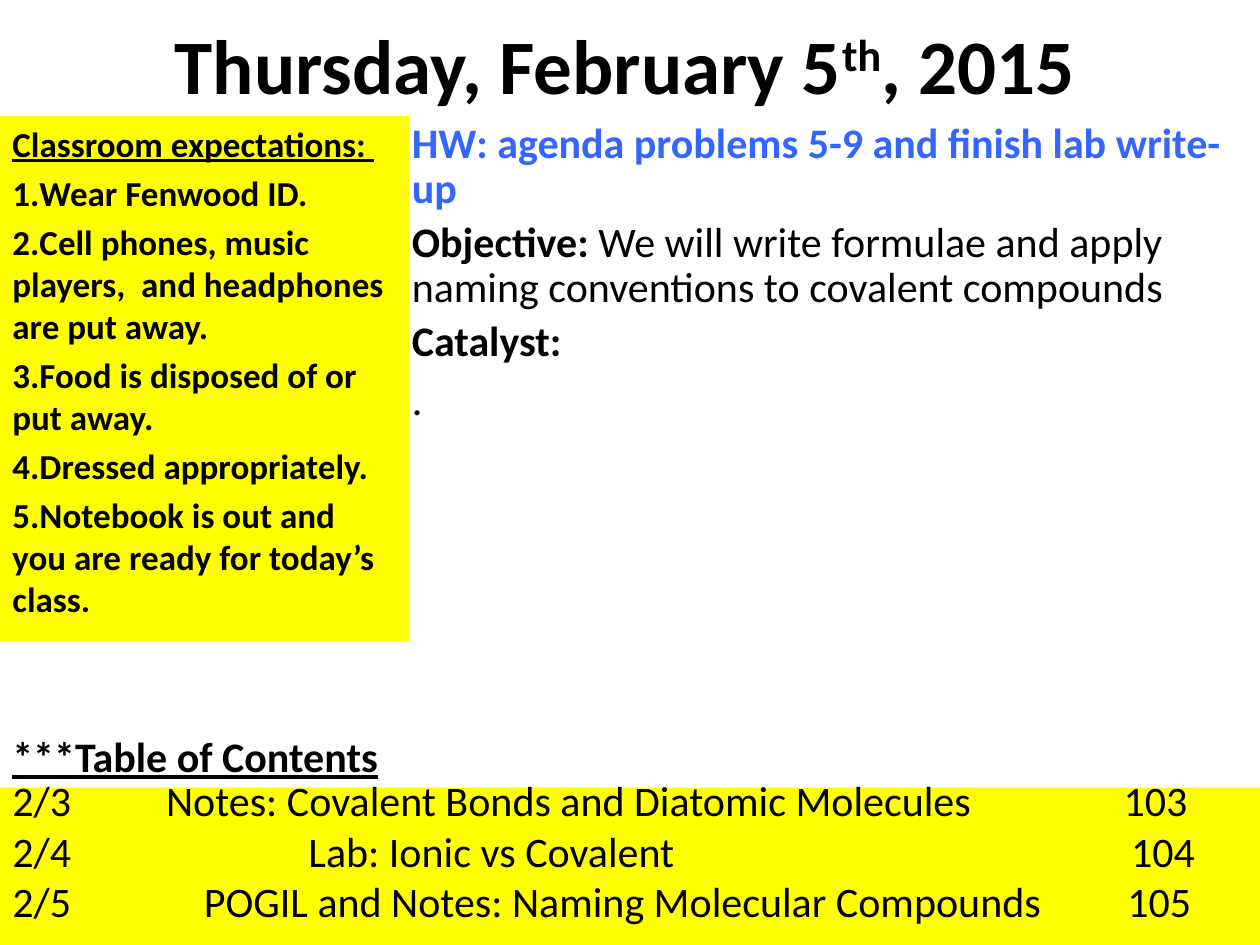
"""Build a class agenda slide with expectations and a table of contents."""
from dataclasses import dataclass

from lxml import etree
from pptx import Presentation
from pptx.dml.color import RGBColor
from pptx.enum.shapes import MSO_SHAPE
from pptx.enum.text import MSO_ANCHOR, PP_ALIGN
from pptx.oxml.ns import qn
from pptx.util import Inches, Pt

RECT = MSO_SHAPE.RECTANGLE
TOP, MIDDLE, BOTTOM = MSO_ANCHOR.TOP, MSO_ANCHOR.MIDDLE, MSO_ANCHOR.BOTTOM
LEFT, CENTER = PP_ALIGN.LEFT, PP_ALIGN.CENTER


@dataclass(frozen=True)
class Theme:
    font: str = "Calibri"
    ink: RGBColor = RGBColor(0, 0, 0)
    blue: RGBColor = RGBColor(0x33, 0x66, 0xFF)
    yellow: RGBColor = RGBColor(0xFF, 0xFF, 0)
    title: int = 44
    body: int = 24
    rule: int = 20


@dataclass(frozen=True)
class Box:
    left: float
    top: float
    width: float
    height: float


@dataclass(frozen=True)
class Entry:
    date: str
    topic: str
    page: int
    start: float
    end: float


THEME = Theme()
RULES = (
    "Wear Fenwood ID.",
    "Cell phones, music players,  and headphones are put away.",
    "Food is disposed of or put away.",
    "Dressed appropriately.",
    "Notebook is out and you are ready for today’s class.",
)
ENTRIES = (
    Entry("2/3", "Notes: Covalent Bonds and Diatomic Molecules", 103, 1.22, 8.82),
    Entry("2/4", "Lab: Ionic vs Covalent", 104, 2.35, 8.88),
    Entry("2/5", "POGIL and Notes: Naming Molecular Compounds", 105, 1.52, 8.85),
)


def frame(slide, box: Box, fill=None, anchor=TOP, wrap=True):
    """Add a text box, or a filled rectangle, and return its text frame."""
    place = [Inches(n) for n in (box.left, box.top, box.width, box.height)]
    if fill is None:
        shape = slide.shapes.add_textbox(*place)
    else:
        shape = slide.shapes.add_shape(RECT, *place)
        shape.shadow.inherit = False
        shape.fill.solid()
        shape.fill.fore_color.rgb = fill
        shape.line.fill.background()
    text = shape.text_frame
    text.word_wrap = wrap
    text.vertical_anchor = anchor
    return text


def line(text, first=False, align=LEFT, before=0.0, space=1.0):
    """Return the first or a new paragraph with its spacing set."""
    para = text.paragraphs[0] if first else text.add_paragraph()
    para.alignment = align
    para.space_before = Pt(before)
    para.line_spacing = space
    return para


def write(para, words: str, size=THEME.body, color=THEME.ink,
          bold=False, under=False, lift=0) -> None:
    """Add one formatted run to a paragraph."""
    run = para.add_run()
    run.text = words
    font = run.font
    font.name, font.size, font.bold, font.underline = THEME.font, Pt(size), bold, under
    font.color.rgb = color
    if lift:
        run._r.get_or_add_rPr().set("baseline", str(lift * 1000))


def number(para) -> None:
    """Number a paragraph with no hanging indent."""
    props = para._p.get_or_add_pPr()
    props.set("marL", "0")
    props.set("indent", "0")
    etree.SubElement(props, qn("a:buFont"), typeface=THEME.font)
    etree.SubElement(props, qn("a:buAutoNum"), type="arabicPeriod")


def tabs(para, *stops: float) -> None:
    """Set left tab stops at the given inches."""
    group = etree.SubElement(para._p.get_or_add_pPr(), qn("a:tabLst"))
    for stop in stops:
        etree.SubElement(group, qn("a:tab"), pos=str(int(Inches(stop))), algn="l")


def heading(slide) -> None:
    """Draw the date."""
    para = line(frame(slide, Box(0.5, 0, 8.92, 0.92), anchor=BOTTOM), True, CENTER)
    for words, lift in (("Thursday, February 5", 0), ("th", 30), (", 2015", 0)):
        write(para, words, size=THEME.title, bold=True, lift=lift)


def agenda(slide) -> None:
    """Draw the homework, objective and catalyst."""
    text = frame(slide, Box(3.17, 0.92, 6.83, 5.25))
    gap = THEME.body * 0.2
    write(line(text, True, before=gap, space=0.9),
          "HW: agenda problems 5-9 and finish lab write-up", color=THEME.blue, bold=True)
    goal = line(text, before=gap, space=0.9)
    write(goal, "Objective: ", bold=True)
    write(goal, "We will write formulae and apply naming conventions to covalent compounds")
    write(line(text, before=gap, space=0.9), "Catalyst:", bold=True)
    write(line(text, before=gap), ".")


def rules(slide) -> None:
    """Draw the numbered classroom expectations."""
    text = frame(slide, Box(0, 0.92, 3.25, 4.17), fill=THEME.yellow)
    gap = THEME.rule * 0.2
    write(line(text, True, before=gap), "Classroom expectations: ",
          size=THEME.rule, bold=True, under=True)
    for rule in RULES:
        para = line(text, before=gap)
        number(para)
        write(para, rule, size=THEME.rule, bold=True)


def contents(slide) -> None:
    """Draw the table of contents and its heading."""
    text = frame(slide, Box(0, 6.25, 10, 1.25), fill=THEME.yellow, anchor=MIDDLE)
    text.margin_top, text.margin_bottom = Inches(0), Inches(0.25)
    for spot, entry in enumerate(ENTRIES):
        para = line(text, spot == 0)
        tabs(para, entry.start, entry.end)
        write(para, f"{entry.date}\t{entry.topic}\t{entry.page}")
    label = frame(slide, Box(0, 5.75, 3.17, 0.51), wrap=False)
    write(line(label, True), "***Table of Contents", bold=True, under=True)


def main() -> None:
    """Build and save the slide."""
    deck = Presentation()
    deck.slide_width, deck.slide_height = Inches(10), Inches(7.5)
    slide = deck.slides.add_slide(deck.slide_layouts[6])
    for draw in (heading, agenda, rules, contents):
        draw(slide)
    deck.save("out.pptx")


if __name__ == "__main__":
    main()
